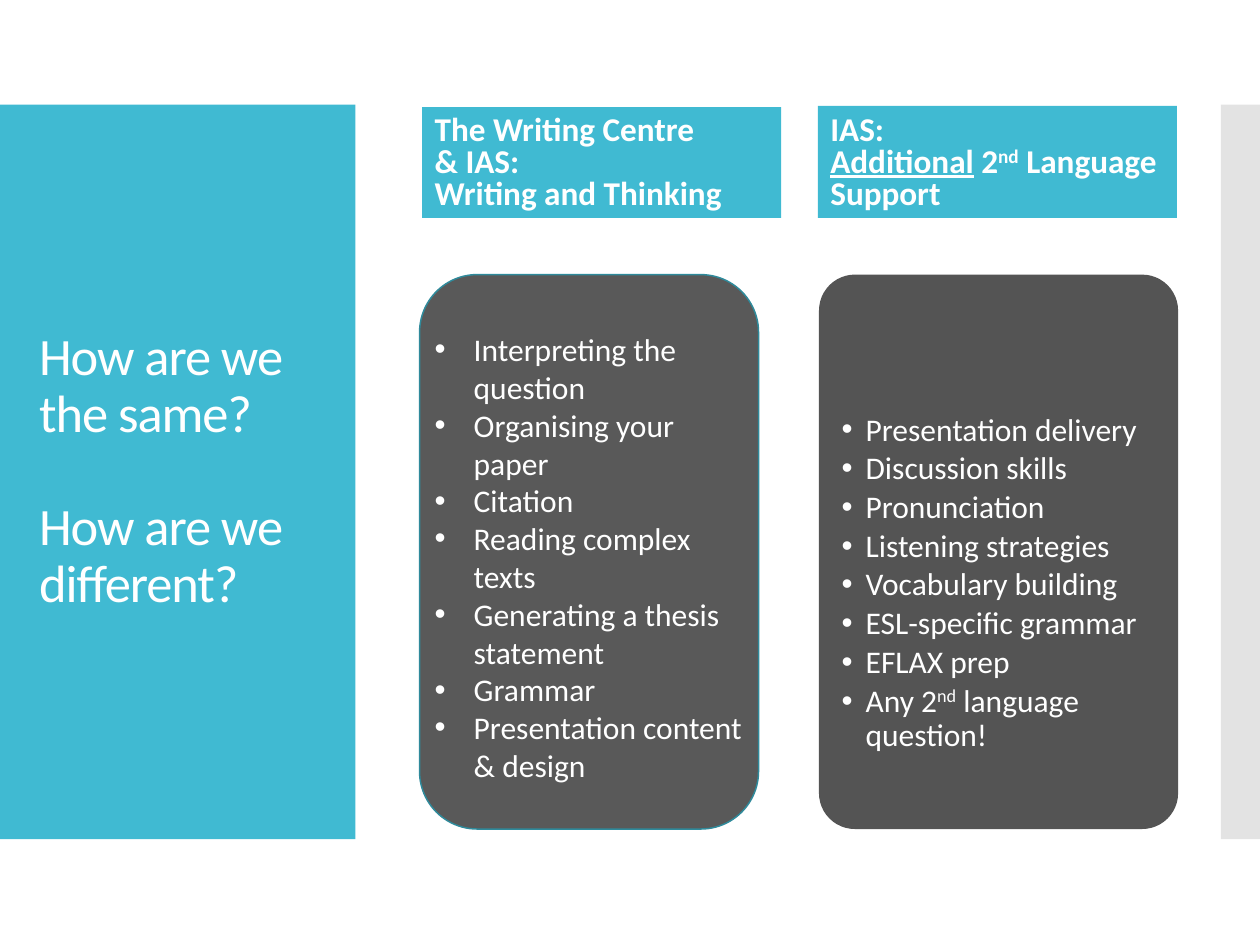
from dataclasses import dataclass

import pptx
import pptx.dml.color
import pptx.enum.shapes
import pptx.enum.text
import pptx.oxml
import pptx.oxml.ns
import pptx.util
from pptx.util import Inches, Pt

RGB = pptx.dml.color.RGBColor
TEAL = RGB(0x40, 0xBA, 0xD2)
EDGE = RGB(0x2F, 0x8A, 0x9B)
SILVER = RGB(0xC8, 0xC8, 0xC8)
SLATE = RGB(0x59, 0x59, 0x59)
COAL = RGB(0x54, 0x54, 0x54)
WHITE = RGB(0xFF, 0xFF, 0xFF)
KIND = pptx.enum.shapes.MSO_SHAPE
ANCHOR = pptx.enum.text.MSO_ANCHOR

Box = tuple[float, float, float, float]
# A line is a list of (text, mark); the mark is "", "under" or "super"
Line = list[tuple[str, str]]


@dataclass
class Panel:
    box: Box
    kind: int
    fill: RGB
    round: float = 0
    edge: RGB | None = None
    alpha: int = 100


@dataclass
class Block:
    slot: int
    box: Box
    lines: list[Line]
    size: float
    anchor: int
    pitch: float = 1
    before: float = 0
    after: float = 0
    hang: float = 0
    bold: bool = False
    track: int = 0
    fill: RGB | None = None


def plain(*texts: str) -> list[Line]:
    return [[(text, "")] for text in texts]


PANELS = [
    Panel((0, 0.83, 2.82, 5.83), KIND.RECTANGLE, TEAL),
    Panel((9.69, 0.83, 0.31, 5.83), KIND.RECTANGLE, SILVER, alpha=50),
    Panel((3.33, 2.18, 2.69, 4.4), KIND.ROUNDED_RECTANGLE, SLATE, 0.17, EDGE),
    Panel((6.5, 2.18, 2.85, 4.4), KIND.ROUNDED_RECTANGLE, COAL, 0.1),
]

BLOCKS = [
    Block(0, (0.21, 1.23, 2.42, 5.03),
          plain("How are we the same?", "How are we different?"),
          30, ANCHOR.MIDDLE, pitch=0.9, before=32.4, track=-60),
    Block(1, (3.35, 0.85, 2.85, 0.88),
          plain("The Writing Centre", "& IAS:", "Writing and Thinking"),
          19, ANCHOR.BOTTOM, pitch=0.8, bold=True, fill=TEAL),
    Block(3, (6.49, 0.84, 2.85, 0.89),
          [[("IAS:", "")],
           [("Additional", "under"), (" 2", ""), ("nd", "super"),
            (" Language Support", "")]],
          19, ANCHOR.BOTTOM, pitch=0.8, bold=True, fill=TEAL),
    Block(2, (3.35, 2.57, 2.69, 3.8),
          plain("Interpreting the question", "Organising your paper",
                "Citation", "Reading complex texts",
                "Generating a thesis statement", "Grammar",
                "Presentation content & design"),
          18, ANCHOR.TOP, hang=0.31),
    Block(4, (6.58, 2.77, 2.68, 3.72),
          plain("Presentation delivery", "Discussion skills",
                "Pronunciation", "Listening strategies",
                "Vocabulary building", "ESL-specific grammar", "EFLAX prep")
          + [[("Any 2", ""), ("nd", "super"), (" language question!", "")]],
          18, ANCHOR.MIDDLE, pitch=0.9, after=2.7, hang=0.19),
]


def draw(slide, panel: Panel) -> None:
    shape = slide.shapes.add_shape(panel.kind, *map(Inches, panel.box))
    shape.shadow.inherit = False
    shape.fill.solid()
    shape.fill.fore_color.rgb = panel.fill
    if panel.round:
        shape.adjustments[0] = panel.round
    if panel.edge:
        shape.line.color.rgb = panel.edge
        shape.line.width = Pt(0.85)
    else:
        shape.line.fill.background()
    if panel.alpha < 100:
        tint = shape.element.spPr.find(".//" + pptx.oxml.ns.qn("a:srgbClr"))
        alpha = pptx.oxml.parse_xml(
            f'<a:alpha {pptx.oxml.ns.nsdecls("a")} val="{panel.alpha * 1000}"/>')
        tint.append(alpha)


def add_run(para, text: str, mark: str, track: int) -> None:
    run = para.add_run()
    run.text = text
    if mark == "under":
        run.font.underline = True
    props = run._r.get_or_add_rPr()
    if mark == "super":
        props.set("baseline", "30000")
    if track:
        props.set("spc", str(track))


def write(slide, block: Block) -> None:
    holder = next(item for item in slide.placeholders
                  if item.placeholder_format.idx == block.slot)
    # Bring the text in front of the panels
    slide.shapes.element.append(holder.element)
    holder.left, holder.top, holder.width, holder.height = map(Inches, block.box)
    if block.fill:
        holder.fill.solid()
        holder.fill.fore_color.rgb = block.fill
    frame = holder.text_frame
    frame.word_wrap = True
    frame.auto_size = pptx.enum.text.MSO_AUTO_SIZE.NONE
    frame.vertical_anchor = block.anchor
    for index, line in enumerate(block.lines):
        para = frame.add_paragraph() if index else frame.paragraphs[0]
        para.alignment = pptx.enum.text.PP_ALIGN.LEFT
        para.line_spacing = block.pitch
        para.space_before = Pt(block.before if index else 0)
        para.space_after = Pt(block.after)
        font = para.font
        font.name, font.size, font.bold = "Calibri", Pt(block.size), block.bold
        font.color.rgb = WHITE
        if block.hang:
            props = para._p.get_or_add_pPr()
            props.set("marL", str(Inches(block.hang)))
            props.set("indent", str(-Inches(block.hang)))
        for text, mark in line:
            add_run(para, text, mark, block.track)


def main() -> None:
    deck = pptx.Presentation()
    deck.slide_width, deck.slide_height = Inches(10), Inches(7.5)
    # The comparison layout: a title, two headings and two lists
    slide = deck.slides.add_slide(deck.slide_layouts[4])
    for panel in PANELS:
        draw(slide, panel)
    for block in BLOCKS:
        write(slide, block)
    deck.save("out.pptx")


if __name__ == "__main__":
    main()
